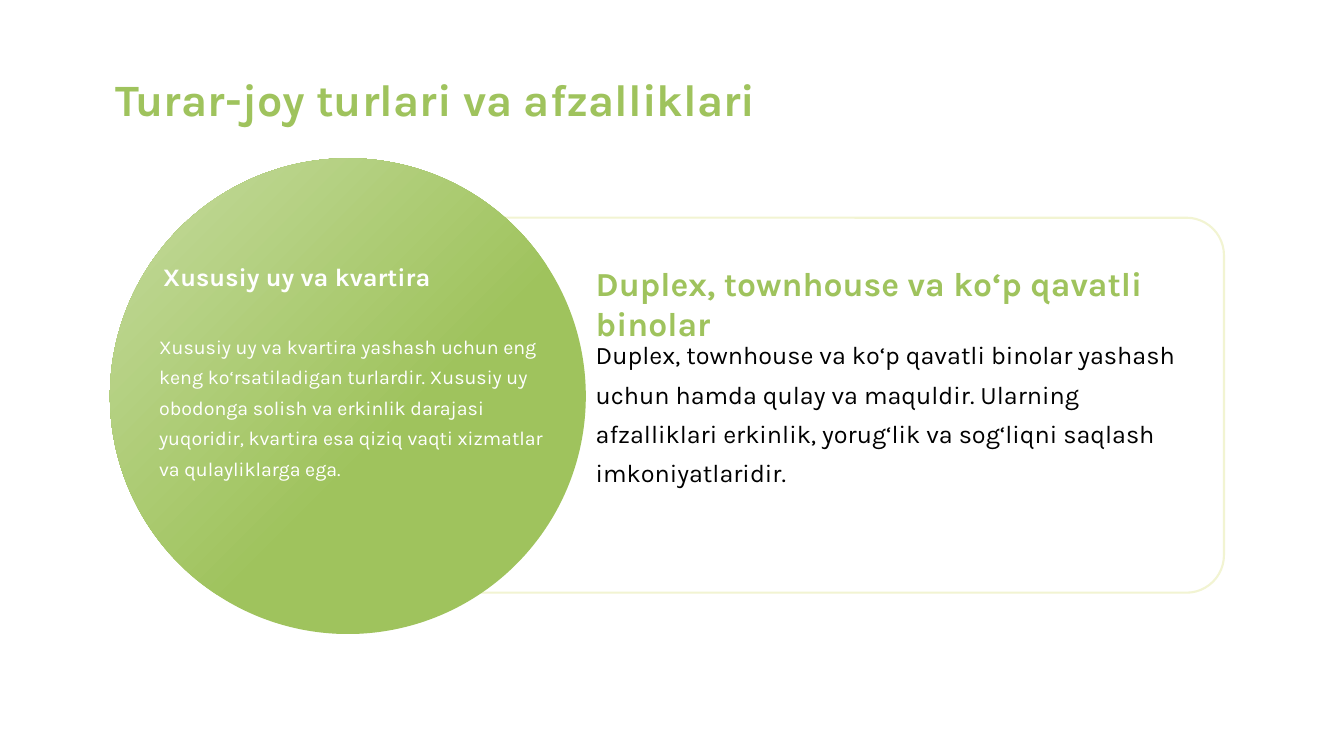
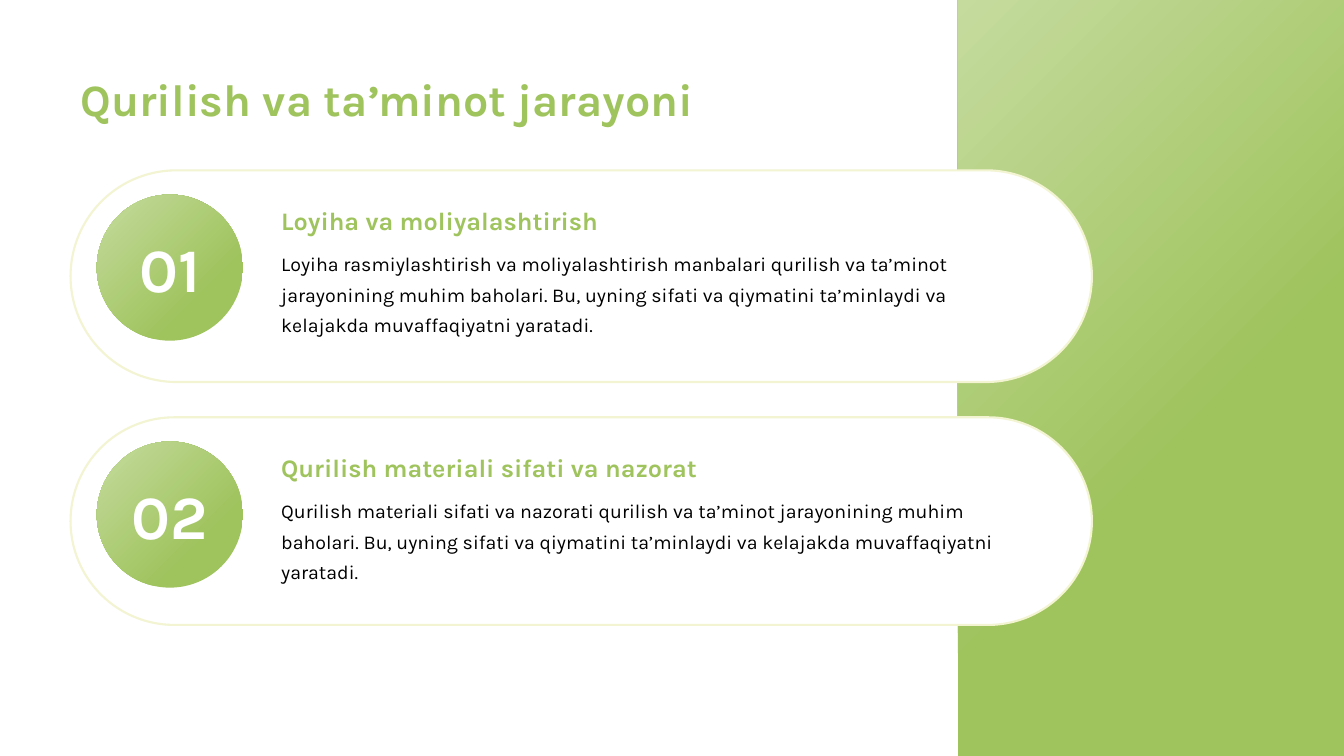
"""Build two slides on housing types and the construction process."""
from pptx import Presentation
from pptx.dml.color import RGBColor
from pptx.enum.shapes import MSO_SHAPE
from pptx.enum.text import MSO_ANCHOR, PP_ALIGN
from pptx.util import Inches, Pt

CARD = MSO_SHAPE.ROUNDED_RECTANGLE
PANEL = MSO_SHAPE.RECTANGLE
CIRCLE = MSO_SHAPE.OVAL
CENTER = PP_ALIGN.CENTER
MIDDLE = MSO_ANCHOR.MIDDLE
FONT = "Karla"
COLORS = {
    "green": "9FC35D",
    "light": "C5DB9E",
    "outline": "F2F4D2",
    "white": "FFFFFF",
    "black": "000000",
}


def color(name):
    return RGBColor.from_string(COLORS[name])


class Deck:
    def __init__(self):
        self.presentation = Presentation()
        self.presentation.slide_width = Inches(13.33)
        self.presentation.slide_height = Inches(7.5)
        self.page = None

    def add_page(self, title, left, width):
        self.page = self.presentation.slides.add_slide(self.presentation.slide_layouts[6])
        self.heading(title, left, 0.66, width, 0.64, size=32)

    def set_text(self, frame, text, size, ink, bold):
        frame.word_wrap = True
        para = frame.paragraphs[0]
        para.text = text
        para.font.name = FONT
        para.font.size = Pt(size)
        para.font.bold = bold
        para.font.color.rgb = color(ink)
        return para

    def text_box(self, text, left, top, width, height, size, ink, bold):
        box = self.page.shapes.add_textbox(
            Inches(left), Inches(top), Inches(width), Inches(height))
        return self.set_text(box.text_frame, text, size, ink, bold)

    def heading(self, text, left, top, width, height, size=18, ink="green"):
        self.text_box(text, left, top, width, height, size, ink, True)

    def body(self, text, left, top, width, height, size=14, ink="black"):
        para = self.text_box(text, left, top, width, height, size, ink, False)
        para.line_spacing = 1.3

    def shape(self, kind, left, top, width, height):
        shape = self.page.shapes.add_shape(
            kind, Inches(left), Inches(top), Inches(width), Inches(height))
        shape.shadow.inherit = False
        return shape

    def card(self, left, top, width, height, rounding):
        card = self.shape(CARD, left, top, width, height)
        card.adjustments[0] = rounding
        card.fill.solid()
        card.fill.fore_color.rgb = color("white")
        card.line.color.rgb = color("outline")
        card.line.width = Pt(1.5)

    def gradient(self, kind, left, top, width, height, start=0.41):
        shape = self.shape(kind, left, top, width, height)
        shape.line.fill.background()
        shape.fill.gradient()
        shape.fill.gradient_angle = 135
        stops = zip(shape.fill.gradient_stops, (start, 1), ("green", "light"))
        for stop, position, name in stops:
            stop.position = position
            stop.color.rgb = color(name)
        return shape

    def badge(self, text, left, top, size):
        frame = self.gradient(CIRCLE, left, top, size, size, start=0.29).text_frame
        frame.margin_left = frame.margin_right = 0
        frame.margin_top = frame.margin_bottom = 0
        frame.vertical_anchor = MIDDLE
        self.set_text(frame, text, 44, "white", True).alignment = CENTER

    def step(self, number, top, height, title, text):
        self.card(0.7, top, 10.13, height, 0.5)
        self.heading(title, 2.69, top + 0.3, 7.41, 0.4)
        self.body(text, 2.69, top + 0.69, 7.72, 1.02)
        self.badge(f"{number:02d}", 0.96, top + 0.24, 1.45)


def housing_types(deck):
    deck.add_page("Turar-joy turlari va afzalliklari", 1.05, 10.72)
    deck.card(2.01, 2.16, 10.13, 3.72, 0.1)
    deck.gradient(CIRCLE, 1.09, 1.57, 4.72, 4.72)
    deck.heading("Xususiy uy va kvartira", 1.52, 2.54, 3.9, 0.4, ink="white")
    deck.body(
        "Xususiy uy va kvartira yashash uchun eng keng ko‘rsatiladigan turlardir. "
        "Xususiy uy obodonga solish va erkinlik darajasi yuqoridir, kvartira esa "
        "qiziq vaqti xizmatlar va qulayliklarga ega.",
        1.48, 3.2, 4.04, 1.93, ink="white")
    deck.heading("Duplex, townhouse va ko‘p qavatli binolar",
                 5.81, 2.56, 5.88, 0.5, size=24)
    deck.body(
        "Duplex, townhouse va ko‘p qavatli binolar yashash uchun hamda qulay va "
        "maquldir. Ularning afzalliklari erkinlik, yorug‘lik va sog‘liqni saqlash "
        "imkoniyatlaridir.",
        5.81, 3.23, 6.17, 2.07, size=18)


def construction_process(deck):
    deck.add_page("Qurilish va taʼminot jarayoni", 0.7, 8.8)
    deck.gradient(PANEL, 9.5, 0, 3.83, 7.5)
    steps = [
        (2.1, "Loyiha va moliyalashtirish",
         "Loyiha rasmiylashtirish va moliyalashtirish manbalari qurilish va ta’minot "
         "jarayonining muhim baholari. Bu, uyning sifati va qiymatini ta’minlaydi va "
         "kelajakda muvaffaqiyatni yaratadi."),
        (2.06, "Qurilish materiali sifati va nazorat",
         "Qurilish materiali sifati va nazorati qurilish va ta’minot jarayonining muhim "
         "baholari. Bu, uyning sifati va qiymatini ta’minlaydi va kelajakda "
         "muvaffaqiyatni yaratadi."),
    ]
    for index, (height, title, text) in enumerate(steps):
        deck.step(index + 1, 1.69 + 2.45 * index, height, title, text)


def main():
    deck = Deck()
    housing_types(deck)
    construction_process(deck)
    deck.presentation.save("out.pptx")


if __name__ == "__main__":
    main()
